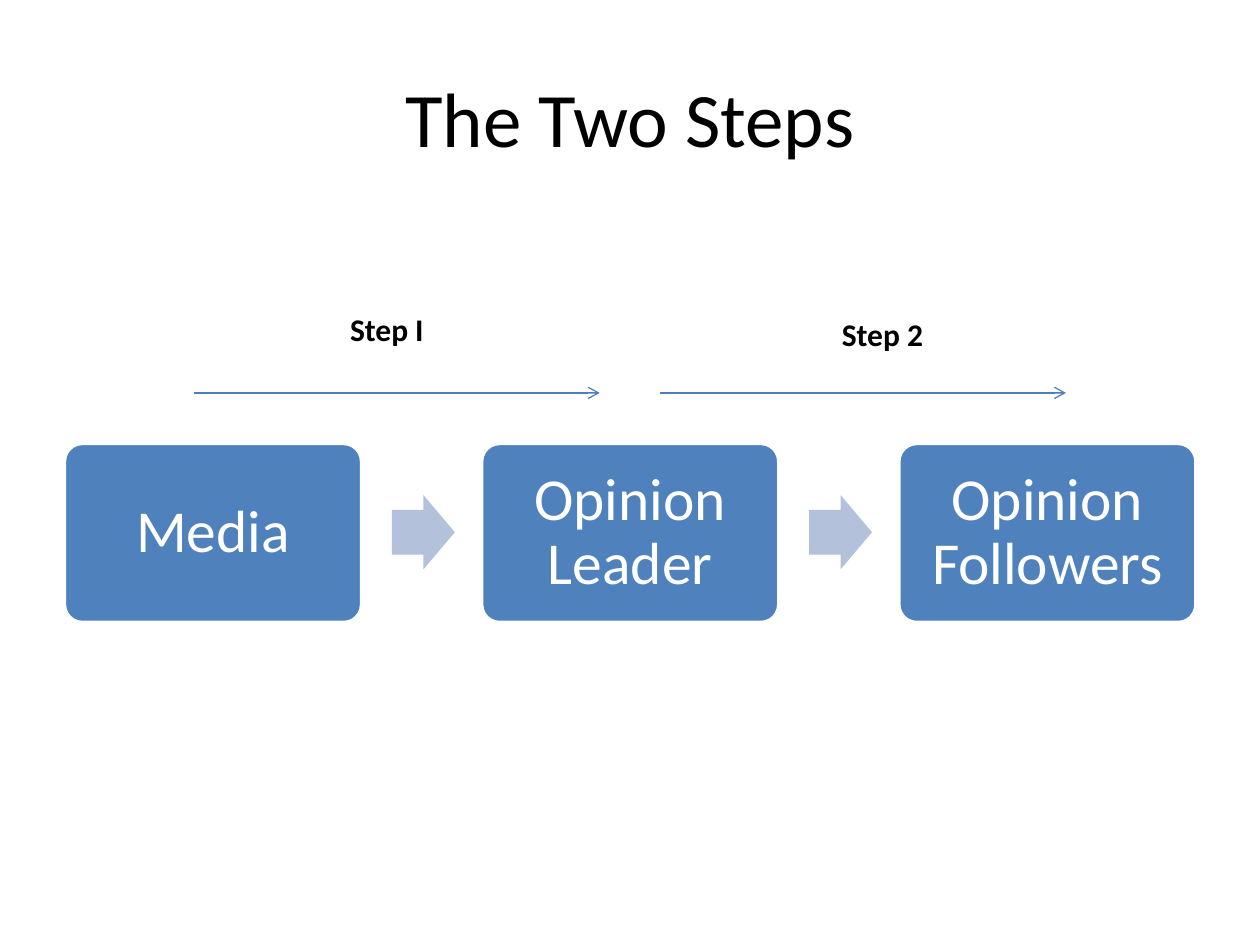
from lxml import etree
from pptx import Presentation
from pptx.dml.color import RGBColor
from pptx.enum.shapes import MSO_CONNECTOR, MSO_SHAPE
from pptx.enum.text import MSO_ANCHOR, PP_ALIGN
from pptx.oxml.ns import qn
from pptx.util import Cm, Pt

BLACK = RGBColor(0x00, 0x00, 0x00)
WHITE = RGBColor(0xFF, 0xFF, 0xFF)
BLUE = RGBColor(0x4F, 0x81, 0xBD)
PALE_BLUE = RGBColor(0xB3, 0xC1, 0xDB)
LINE_BLUE = RGBColor(0x4B, 0x7E, 0xBC)


def write(shape, text, size, color=BLACK, bold=False, spacing=1.0,
          anchor=MSO_ANCHOR.TOP):
    frame = shape.text_frame
    frame.word_wrap = True
    frame.vertical_anchor = anchor
    para = frame.paragraphs[0]
    para.alignment = PP_ALIGN.CENTER
    para.line_spacing = spacing
    span = para.add_run()
    span.text = text
    span.font.name = "Calibri"
    span.font.size = Pt(size)
    span.font.bold = bold
    span.font.color.rgb = color


def add_filled(kind, left, top, width, height, fill):
    shape = slide.shapes.add_shape(kind, Cm(left), Cm(top), Cm(width), Cm(height))
    shape.shadow.inherit = False
    shape.fill.solid()
    shape.fill.fore_color.rgb = fill
    return shape


deck = Presentation()
deck.slide_width, deck.slide_height = Cm(25.4), Cm(19.05)
slide = deck.slides.add_slide(deck.slide_layouts[6])

title = slide.shapes.add_textbox(Cm(1.27), Cm(0.76), Cm(22.86), Cm(3.18))
write(title, "The Two Steps", 44, anchor=MSO_ANCHOR.MIDDLE)

# Boxes at an equal pitch, with a block arrow in each gap
stages = ["Media", "Opinion Leader", "Opinion Followers"]
pitch = 8.41
for index, stage in enumerate(stages):
    left = 1.3 + index * pitch
    box = add_filled(MSO_SHAPE.ROUNDED_RECTANGLE, left, 8.94, 5.99, 3.61, BLUE)
    box.adjustments[0] = 0.1
    box.line.color.rgb = WHITE
    box.line.width = Pt(2)
    frame = box.text_frame
    frame.margin_left = frame.margin_right = Cm(0.36)
    frame.margin_top = frame.margin_bottom = Cm(0.36)
    write(box, stage, 34, color=WHITE, spacing=0.9, anchor=MSO_ANCHOR.MIDDLE)

    if index < len(stages) - 1:
        arrow = add_filled(MSO_SHAPE.RIGHT_ARROW, left + 6.6, 9.98, 1.27, 1.5, PALE_BLUE)
        arrow.adjustments[0] = 0.6
        arrow.adjustments[1] = 0.5
        arrow.line.fill.background()

# Step arrows: start of the line, then left, top and width of its label
steps = [
    ("Step I", 3.91, 4.7, 6.12, 6.2),
    ("Step 2", 13.31, 15.29, 6.22, 5.0),
]
for text, start, left, top, width in steps:
    line = slide.shapes.add_connector(
        MSO_CONNECTOR.STRAIGHT, Cm(start), Cm(7.92), Cm(start + 8.18), Cm(7.92))
    line.line.color.rgb = LINE_BLUE
    line.line.width = Pt(0.75)
    etree.SubElement(line.line._get_or_add_ln(), qn("a:tailEnd"), type="arrow")
    etree.SubElement(line._element.spPr, qn("a:effectLst"))

    label = slide.shapes.add_textbox(Cm(left), Cm(top), Cm(width), Cm(1.02))
    write(label, text, 18, bold=True)

deck.save("out.pptx")
